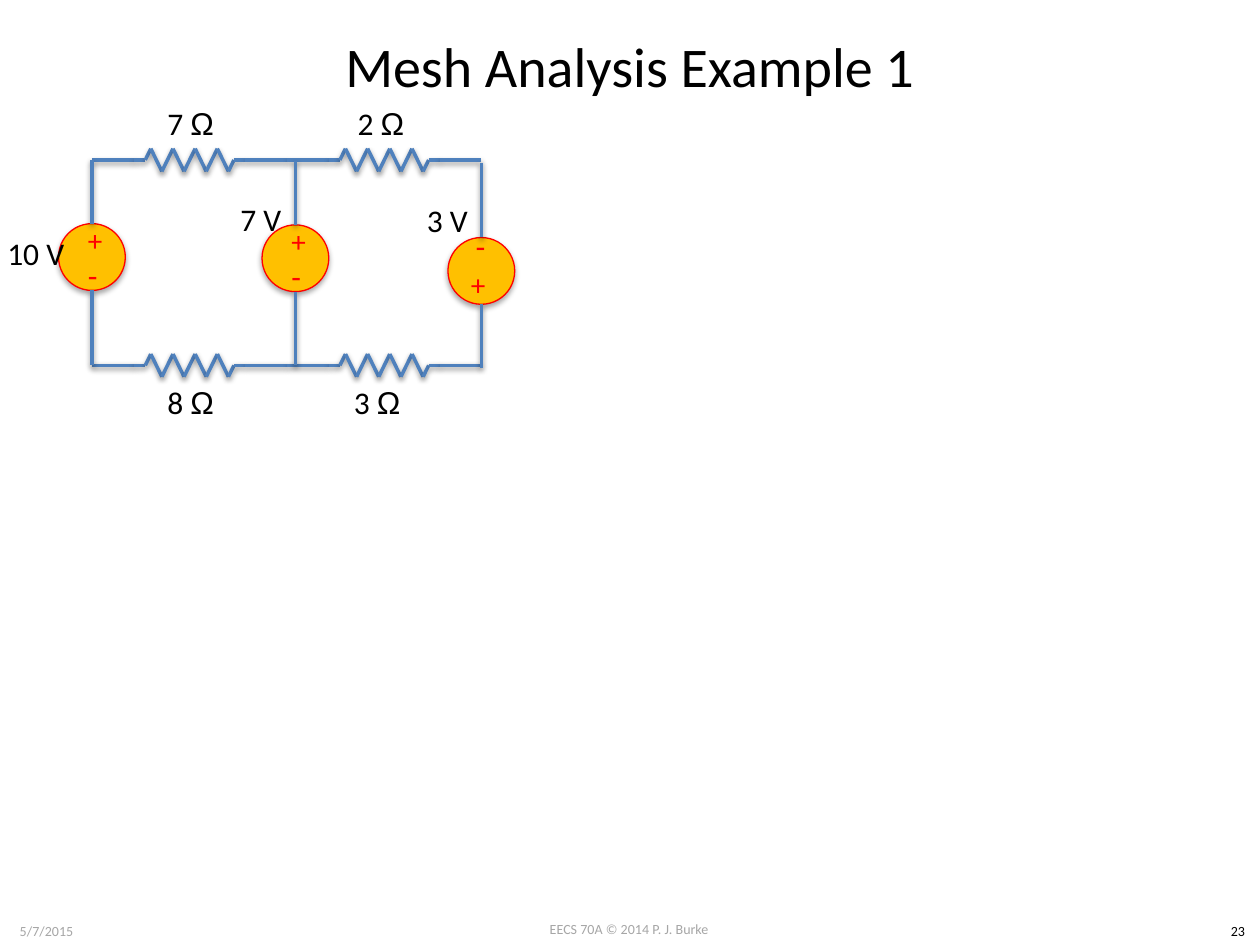
"""Build a slide with a two-mesh circuit of resistors and voltage sources."""
from itertools import pairwise
from typing import NamedTuple

from lxml.etree import SubElement
from pptx import Presentation
from pptx.dml.color import RGBColor
from pptx.enum.shapes import MSO_CONNECTOR as Connector, MSO_SHAPE as Shape
from pptx.enum.text import MSO_ANCHOR as Anchor, MSO_AUTO_SIZE as AutoSize, PP_ALIGN as Align
from pptx.oxml.ns import qn
from pptx.util import Inches, Pt

BLUE, RED, AMBER, GREY, BLACK = "4F81BD", "FF0000", "FFC000", "A6A6A6", "000000"
TOP_RAIL, BOTTOM_RAIL = 1.27, 2.9
RADIUS, SIGN_OFFSET = 0.265, 0.14
SIGN_WIDTH, SIGN_HEIGHT = 0.26, 0.33


class Resistor(NamedTuple):
    left: float
    right: float
    y: float


class Source(NamedTuple):
    x: float
    y: float
    top: float
    bottom: float
    angle: int = 0


class Label(NamedTuple):
    text: str
    left: float
    top: float
    width: float
    unit: str = ""


class Footer(NamedTuple):
    text: str
    left: float
    top: float
    width: float
    color: str


RESISTORS = [
    Resistor(left, right, y)
    for y in (TOP_RAIL, BOTTOM_RAIL)
    for left, right in ((0.73, 2.28), (2.28, 3.82))
]
SOURCES = [
    Source(0.73, 2.04, TOP_RAIL, BOTTOM_RAIL),
    Source(2.345, 2.05, 1.28, BOTTOM_RAIL),
    Source(3.82, 2.15, 1.29, 2.92, angle=180),
]
LABELS = [
    Label("7 ", 1.23, 0.78, 0.58, "Ω"),
    Label("2 ", 2.74, 0.78, 0.58, "Ω"),
    Label("8 ", 1.23, 2.99, 0.58, "Ω"),
    Label("3 ", 2.71, 2.99, 0.58, "Ω"),
    Label("10 V", -0.04, 1.81, 0.66),
    Label("7 V", 1.81, 1.54, 0.53),
    Label("3 V", 3.29, 1.55, 0.53),
]
FOOTERS = [
    Footer("EECS 70A © 2014 P. J. Burke", 3.83, 7.26, 2.33, GREY),
    Footer("5/7/2015", 0, 7.27, 0.74, GREY),
    Footer("23", 9.65, 7.27, 0.35, BLACK),
]


def rgb(color: str) -> RGBColor:
    """Turn a hex string into a colour."""
    return RGBColor.from_string(color)


def write(para, text: str, *, size: float, color: str = BLACK, font: str = "Calibri") -> None:
    """Add one formatted span to a paragraph."""
    span = para.add_run()
    span.text = text
    span.font.size = Pt(size)
    span.font.name = font
    span.font.color.rgb = rgb(color)


def add_box(shapes, left: float, top: float, width: float, height: float, *,
            wrap: bool = False, align=Align.LEFT, anchor=Anchor.TOP):
    """Add an empty text box and return it."""
    box = shapes.add_textbox(Inches(left), Inches(top), Inches(width), Inches(height))
    frame = box.text_frame
    frame.word_wrap = wrap
    frame.vertical_anchor = anchor
    frame.auto_size = AutoSize.NONE if wrap else AutoSize.SHAPE_TO_FIT_TEXT
    frame.paragraphs[0].alignment = align
    return box


def add_shadow(shape, *, opacity: int, distance: float) -> None:
    """Give a shape a soft black shadow straight below it."""
    effects = SubElement(shape.element.spPr, qn("a:effectLst"))
    shadow = SubElement(effects, qn("a:outerShdw"), blurRad=str(Pt(3.15)),
                        dist=str(Pt(distance)), dir="5400000", rotWithShape="0")
    black = SubElement(shadow, qn("a:srgbClr"), val=BLACK)
    SubElement(black, qn("a:alpha"), val=str(opacity * 1000))


def draw_wire(shapes, start: tuple[float, float], end: tuple[float, float]) -> None:
    """Draw one straight piece of wire."""
    wire = shapes.add_connector(Connector.STRAIGHT, *map(Inches, start + end))
    wire.line.color.rgb = rgb(BLUE)
    wire.line.width = Pt(2)
    add_shadow(wire, opacity=38, distance=1.6)


def draw_resistor(page, resistor: Resistor) -> None:
    """Draw a zigzag with its leads as one group."""
    left, right, y = resistor
    swing, half_step = 0.09, 0.044
    middle = (left + right) / 2
    first = middle - 8 * half_step
    peaks = [(first + half_step * (2 * i + 1), y + swing * (1 if i % 2 else -1))
             for i in range(8)]
    last = middle + 8 * half_step
    points = [(left, y), (first - swing, y), (first, y), *peaks,
              (last, y), (last + swing, y), (right, y)]
    group = page.shapes.add_group_shape()
    for start, end in pairwise(points):
        draw_wire(group.shapes, start, end)


def draw_source(page, source: Source) -> None:
    """Draw a voltage source with its signs and wires as one group."""
    x, y, top, bottom, angle = source
    shapes = page.shapes.add_group_shape().shapes
    circle = shapes.add_shape(Shape.OVAL, Inches(x - RADIUS), Inches(y - RADIUS),
                              Inches(2 * RADIUS), Inches(2 * RADIUS))
    circle.rotation = angle
    circle.fill.solid()
    circle.fill.fore_color.rgb = rgb(AMBER)
    circle.line.color.rgb = rgb(RED)
    circle.line.width = Pt(0.75)
    add_shadow(circle, opacity=35, distance=1.8)
    up = SIGN_OFFSET if angle else -SIGN_OFFSET
    for sign, offset, size in (("+", up, 16.6), ("-", -up, 18)):
        box = add_box(shapes, x - SIGN_WIDTH / 2, y + offset - SIGN_HEIGHT / 2,
                      SIGN_WIDTH, SIGN_HEIGHT, wrap=True, align=Align.CENTER,
                      anchor=Anchor.MIDDLE)
        box.rotation = angle
        write(box.text_frame.paragraphs[0], sign, size=size, color=RED)
    draw_wire(shapes, (x, top), (x, y - RADIUS))
    draw_wire(shapes, (x, y + RADIUS), (x, bottom))


def draw_label(page, label: Label) -> None:
    """Write the value of a part, with its unit in Arial if given apart."""
    box = add_box(page.shapes, label.left, label.top, label.width, 0.4)
    para = box.text_frame.paragraphs[0]
    write(para, label.text, size=18)
    if label.unit:
        write(para, label.unit, size=18, font="Arial")


def draw_footer(page, footer: Footer) -> None:
    """Write one small text at the foot of the page."""
    box = add_box(page.shapes, footer.left, footer.top, footer.width, 0.24, align=Align.CENTER)
    write(box.text_frame.paragraphs[0], footer.text, size=8, color=footer.color)


def draw_title(page, text: str) -> None:
    """Place and fill the title."""
    title = page.shapes.title
    title.left, title.top, title.width, title.height = map(Inches, (0.5, -0.11, 9, 1.25))
    title.text_frame.vertical_anchor = Anchor.MIDDLE
    para = title.text_frame.paragraphs[0]
    para.alignment = Align.CENTER
    write(para, text, size=32)


def main() -> None:
    """Build and save the deck."""
    deck = Presentation()
    deck.slide_width, deck.slide_height = Inches(10), Inches(7.5)
    page = deck.slides.add_slide(deck.slide_layouts.get_by_name("Title Only"))
    draw_title(page, "Mesh Analysis Example 1")
    for draw, parts in ((draw_footer, FOOTERS), (draw_resistor, RESISTORS),
                        (draw_source, SOURCES), (draw_label, LABELS)):
        for part in parts:
            draw(page, part)
    deck.save("out.pptx")


if __name__ == "__main__":
    main()
